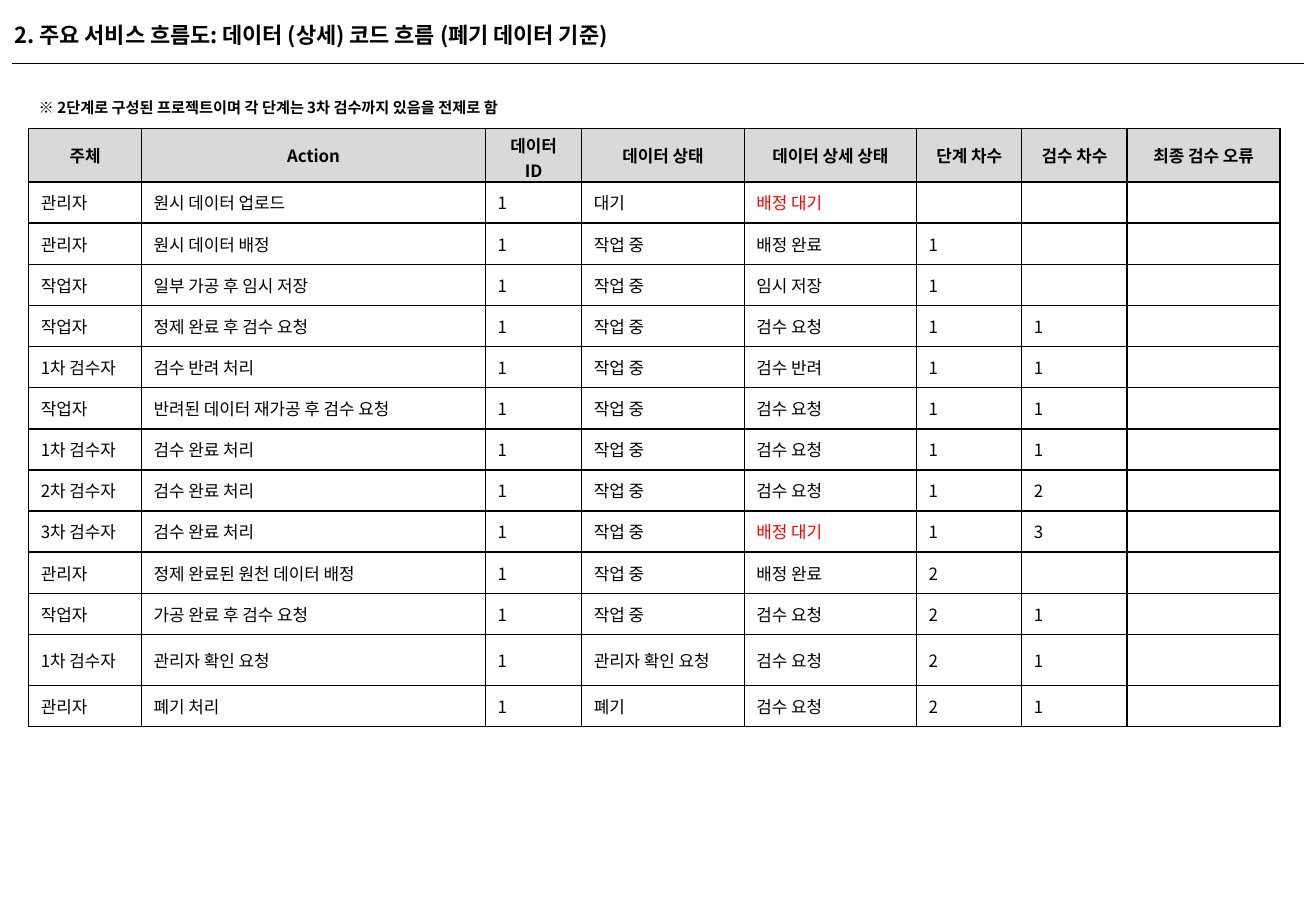
"""Build the slide on data status codes through the discard flow."""
import lxml.etree
import pptx
import pptx.dml.color
import pptx.enum.shapes
import pptx.enum.text
import pptx.oxml.ns
import pptx.util
from pptx.util import Cm

FONT = "Noto Sans CJK KR"
BLACK = pptx.dml.color.RGBColor(0x00, 0x00, 0x00)
RED = pptx.dml.color.RGBColor(0xFF, 0x00, 0x00)
GRAY = pptx.dml.color.RGBColor(0xD9, 0xD9, 0xD9)
MIDDLE = pptx.enum.text.MSO_ANCHOR.MIDDLE
LEFT = pptx.enum.text.PP_ALIGN.LEFT
CENTER = pptx.enum.text.PP_ALIGN.CENTER
qn = pptx.oxml.ns.qn

COLUMN_WIDTHS = [2.36, 7.19, 2.01, 3.4, 3.6, 2.2, 2.2, 3.2]
HEADERS = ["주체", "Action", "데이터 ID", "데이터 상태", "데이터 상세 상태",
           "단계 차수", "검수 차수", "최종 검수 오류"]
STEPS = [
    ["관리자", "원시 데이터 업로드", "1", "대기", "배정 대기", "", "", ""],
    ["관리자", "원시 데이터 배정", "1", "작업 중", "배정 완료", "1", "", ""],
    ["작업자", "일부 가공 후 임시 저장", "1", "작업 중", "임시 저장", "1", "", ""],
    ["작업자", "정제 완료 후 검수 요청", "1", "작업 중", "검수 요청", "1", "1", ""],
    ["1차 검수자", "검수 반려 처리", "1", "작업 중", "검수 반려", "1", "1", ""],
    ["작업자", "반려된 데이터 재가공 후 검수 요청", "1", "작업 중", "검수 요청", "1", "1", ""],
    ["1차 검수자", "검수 완료 처리", "1", "작업 중", "검수 요청", "1", "1", ""],
    ["2차 검수자", "검수 완료 처리", "1", "작업 중", "검수 요청", "1", "2", ""],
    ["3차 검수자", "검수 완료 처리", "1", "작업 중", "배정 대기", "1", "3", ""],
    ["관리자", "정제 완료된 원천 데이터 배정", "1", "작업 중", "배정 완료", "2", "", ""],
    ["작업자", "가공 완료 후 검수 요청", "1", "작업 중", "검수 요청", "2", "1", ""],
    ["1차 검수자", "관리자 확인 요청", "1", "관리자 확인 요청", "검수 요청", "2", "1", ""],
    ["관리자", "폐기 처리", "1", "폐기", "검수 요청", "2", "1", ""],
]
ROW_HEIGHTS = [1.11] + [0.86] * 11 + [1.07, 0.86]


def write_text(text_frame, text, size, bold, color=BLACK, alignment=LEFT):
    paragraph = text_frame.paragraphs[0]
    paragraph.alignment = alignment
    paragraph.font.name = FONT
    paragraph.font.size = pptx.util.Pt(size)
    paragraph.font.bold = bold
    paragraph.font.color.rgb = color
    defaults = paragraph._p.pPr.find(qn("a:defRPr"))
    lxml.etree.SubElement(defaults, qn("a:ea"), typeface=FONT)
    if text:
        paragraph.add_run().text = text
    else:
        paragraph._p.get_or_add_endParaRPr().set("sz", str(size * 100))
    return paragraph


def add_borders(cell):
    properties = cell._tc.get_or_add_tcPr()
    for side in ("lnL", "lnR", "lnT", "lnB"):
        border = lxml.etree.SubElement(properties, qn(f"a:{side}"), w=str(pptx.util.Pt(1)))
        fill = lxml.etree.SubElement(border, qn("a:solidFill"))
        lxml.etree.SubElement(fill, qn("a:srgbClr"), val=str(BLACK))


presentation = pptx.Presentation()
presentation.slide_width = Cm(27.51)
presentation.slide_height = Cm(19.05)
slide = presentation.slides.add_slide(presentation.slide_layouts[5])

title = slide.shapes.title
title.left, title.top, title.width, title.height = Cm(0.05), Cm(0.33), Cm(26.72), Cm(0.81)
title.text_frame.auto_size = pptx.enum.text.MSO_AUTO_SIZE.NONE
title.text_frame.vertical_anchor = MIDDLE
write_text(title.text_frame, "2. 주요 서비스 흐름도: 데이터 (상세) 코드 흐름 (폐기 데이터 기준)", 13, True)

title_rule = slide.shapes.add_connector(
    pptx.enum.shapes.MSO_CONNECTOR.STRAIGHT, Cm(0.25), Cm(1.33), Cm(27.25), Cm(1.33))
title_rule.line.color.rgb = BLACK
title_rule.line.width = pptx.util.Pt(0.75)
lxml.etree.SubElement(title_rule._element.spPr, qn("a:effectLst"))

table = slide.shapes.add_table(
    len(ROW_HEIGHTS), len(COLUMN_WIDTHS), Cm(0.6), Cm(2.69),
    Cm(sum(COLUMN_WIDTHS)), Cm(sum(ROW_HEIGHTS))).table
table.first_row = False
table.horz_banding = False
for column, width in zip(table.columns, COLUMN_WIDTHS):
    column.width = Cm(width)
for row, height in zip(table.rows, ROW_HEIGHTS):
    row.height = Cm(height)

for row_index, texts in enumerate([HEADERS] + STEPS):
    is_header = row_index == 0
    for column_index, text in enumerate(texts):
        cell = table.cell(row_index, column_index)
        cell.vertical_anchor = MIDDLE
        add_borders(cell)
        if is_header:
            cell.fill.solid()
            cell.fill.fore_color.rgb = GRAY
        else:
            cell.fill.background()
        write_text(cell.text_frame, text, 10, is_header,
                   RED if text == "배정 대기" else BLACK,
                   CENTER if is_header else LEFT)

data_id_header = table.cell(0, HEADERS.index("데이터 ID"))
data_id_header.margin_left = data_id_header.margin_right = Cm(0.4)
data_id_header.margin_top = Cm(0.1)
data_id_header.margin_bottom = Cm(0)

note = slide.shapes.add_textbox(Cm(0.56), Cm(1.73), Cm(11.23), Cm(0.76))
note.text_frame.word_wrap = True
note_paragraph = write_text(
    note.text_frame, "※ 2단계로 구성된 프로젝트이며 각 단계는 3차 검수까지 있음을 전제로 함", 9, True)
note_paragraph.line_spacing = 1.5

presentation.save("out.pptx")
